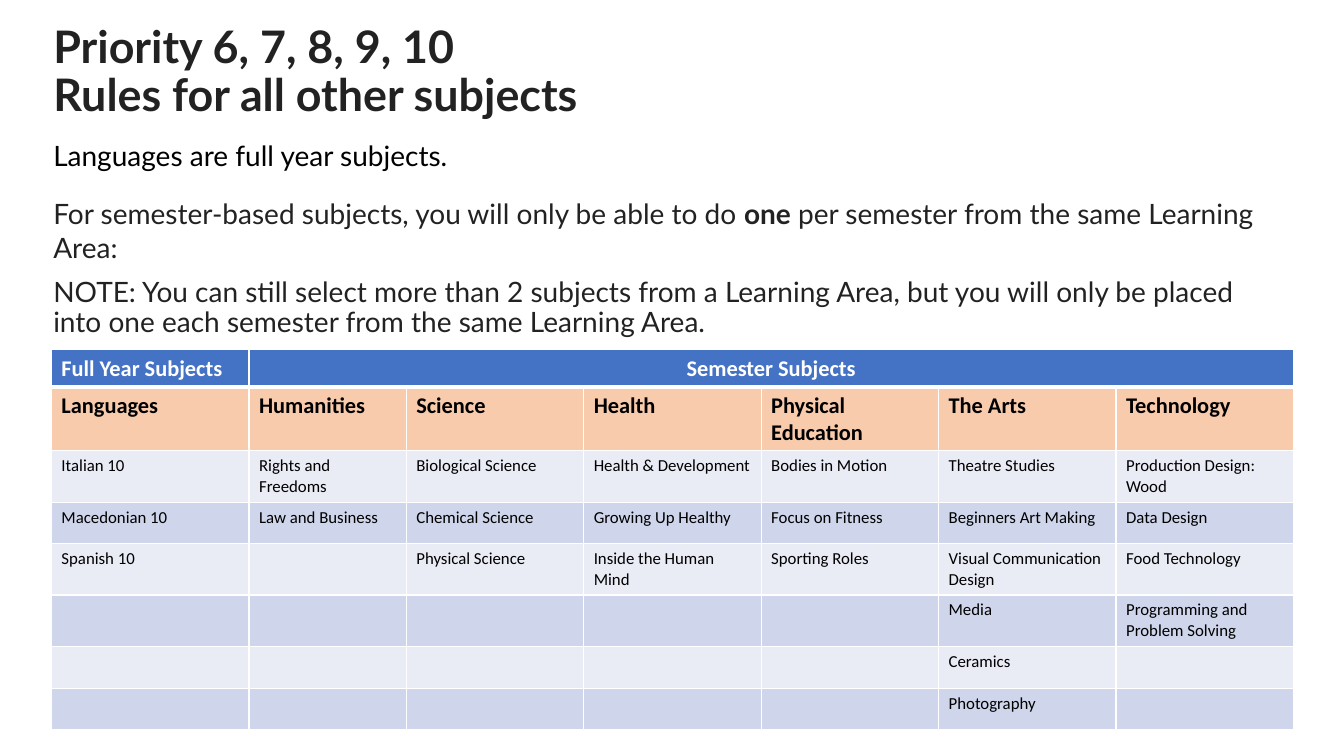
from typing import NamedTuple

from lxml import etree
from pptx import Presentation
from pptx import util as u
from pptx.dml.color import RGBColor
from pptx.enum import text
from pptx.oxml import ns

EMU_PER_PX = 9144  # 100 px to the inch

WHITE = RGBColor(0xFF, 0xFF, 0xFF)
BLACK = RGBColor(0x00, 0x00, 0x00)
CHARCOAL = RGBColor(0x22, 0x22, 0x22)
BLUE = RGBColor(0x44, 0x72, 0xC4)
PEACH = RGBColor(0xF8, 0xCB, 0xAD)
BAND_LIGHT = RGBColor(0xE9, 0xEB, 0xF5)
BAND_DARK = RGBColor(0xCF, 0xD5, 0xEA)


class Style(NamedTuple):
    font: str
    size: int
    color: RGBColor
    bold: bool = False


class Box(NamedTuple):
    left: int
    top: int
    width: int
    height: int


class Run(NamedTuple):
    words: str
    style: Style


class Block(NamedTuple):
    runs: list[Run]
    line_spacing: float = 1.0
    before: int = 0
    after: int = 0


class RowLook(NamedTuple):
    fill: RGBColor
    style: Style
    top_border: int = 1
    bottom_border: int = 1


TITLE = Style("Lato", 32, CHARCOAL, True)
LEAD = Style("Lato", 20, BLACK)
BODY = Style("Lato", 20, CHARCOAL)
STRONG = BODY._replace(bold=True)
HEADER = Style("Calibri", 16, WHITE, True)
AREA = Style("Calibri", 16, BLACK, True)
SUBJECT = Style("Calibri", 12, BLACK)

TITLE_BLOCKS = [
    Block([Run("Priority 6, 7, 8, 9, 10\vRules for all other subjects", TITLE)], 0.9),
]
RULE_BLOCKS = [
    Block([Run("Languages are full year subjects.", LEAD)], before=10, after=8),
    Block([
        Run("For semester-based subjects, you will only be able to do ", BODY),
        Run("one", STRONG),
        Run(" per semester from the same Learning Area:", BODY),
    ], before=10),
    Block([Run("NOTE: You can still select more than 2 subjects from a Learning Area, "
               "but you will only be placed into one each semester from the same "
               "Learning Area.", BODY)], 0.9, before=10),
]

COLUMN_WIDTHS = [196, 156] + [176] * 5
ROW_HEIGHTS = [37, 63, 51, 41, 51, 51, 42, 41]
ROWS = [
    ["Full Year Subjects", "Semester Subjects", "", "", "", "", ""],
    ["Languages", "Humanities", "Science", "Health", "Physical Education",
     "The Arts", "Technology"],
    ["Italian 10", "Rights and Freedoms", "Biological Science", "Health & Development",
     "Bodies in Motion", "Theatre Studies", "Production Design: Wood"],
    ["Macedonian 10", "Law and Business", "Chemical Science", "Growing Up Healthy",
     "Focus on Fitness", "Beginners Art Making", "Data Design"],
    ["Spanish 10", "", "Physical Science", "Inside the Human Mind",
     "Sporting Roles", "Visual Communication Design", "Food Technology"],
    ["", "", "", "", "", "Media", "Programming and Problem Solving"],
    ["", "", "", "", "", "Ceramics", ""],
    ["", "", "", "", "", "Photography", ""],
]


def px(length: int) -> u.Emu:
    return u.Emu(length * EMU_PER_PX)


def add_run(paragraph, run: Run) -> None:
    """Add styled text; a vertical tab in the words becomes a line break."""
    for index, line in enumerate(run.words.split("\v")):
        if index:
            paragraph.add_line_break()
        piece = paragraph.add_run()
        piece.text = line
        piece.font.name = run.style.font
        piece.font.size = u.Pt(run.style.size)
        piece.font.bold = run.style.bold
        piece.font.color.rgb = run.style.color


def add_text(slide, box: Box, blocks: list[Block], anchor: text.MSO_ANCHOR) -> None:
    frame = slide.shapes.add_textbox(*map(px, box)).text_frame
    frame.word_wrap = True
    frame.vertical_anchor = anchor
    for index, block in enumerate(blocks):
        paragraph = frame.add_paragraph() if index else frame.paragraphs[0]
        paragraph.line_spacing = block.line_spacing
        paragraph.space_before = u.Pt(block.before)
        paragraph.space_after = u.Pt(block.after)
        for run in block.runs:
            add_run(paragraph, run)


def add_borders(cell, look: RowLook) -> None:
    properties = cell._tc.get_or_add_tcPr()
    widths = {"L": 1, "R": 1, "T": look.top_border, "B": look.bottom_border}
    for side, width in widths.items():
        line = etree.SubElement(properties, ns.qn(f"a:ln{side}"), w=str(u.Pt(width)))
        fill = etree.SubElement(line, ns.qn("a:solidFill"))
        etree.SubElement(fill, ns.qn("a:srgbClr"), val=str(WHITE))


def row_look(row: int) -> RowLook:
    if row == 0:
        return RowLook(BLUE, HEADER, bottom_border=3)
    if row == 1:
        return RowLook(PEACH, AREA, top_border=3)
    return RowLook(BAND_DARK if row % 2 else BAND_LIGHT, SUBJECT)


def add_subject_table(slide, left: int, top: int) -> None:
    box = Box(left, top, sum(COLUMN_WIDTHS), sum(ROW_HEIGHTS))
    table = slide.shapes.add_table(len(ROWS), len(COLUMN_WIDTHS), *map(px, box)).table
    for column, width in zip(table.columns, COLUMN_WIDTHS):
        column.width = px(width)
    for row_index, (row, height) in enumerate(zip(ROWS, ROW_HEIGHTS)):
        table.rows[row_index].height = px(height)
        look = row_look(row_index)
        for column_index, words in enumerate(row):
            cell = table.cell(row_index, column_index)
            add_borders(cell, look)
            cell.fill.solid()
            cell.fill.fore_color.rgb = look.fill
            if words:
                add_run(cell.text_frame.paragraphs[0], Run(words, look.style))
    semester_header = table.cell(0, 1)
    semester_header.merge(table.cell(0, len(COLUMN_WIDTHS) - 1))
    semester_header.text_frame.paragraphs[0].alignment = text.PP_ALIGN.CENTER


def main() -> None:
    presentation = Presentation()
    presentation.slide_width = px(1333)
    presentation.slide_height = px(750)
    slide = presentation.slides.add_slide(presentation.slide_layouts[6])
    add_text(slide, Box(43, 0, 1319, 145), TITLE_BLOCKS, text.MSO_ANCHOR.MIDDLE)
    add_text(slide, Box(43, 132, 1239, 216), RULE_BLOCKS, text.MSO_ANCHOR.TOP)
    add_subject_table(slide, 51, 347)
    presentation.save("out.pptx")


if __name__ == "__main__":
    main()
